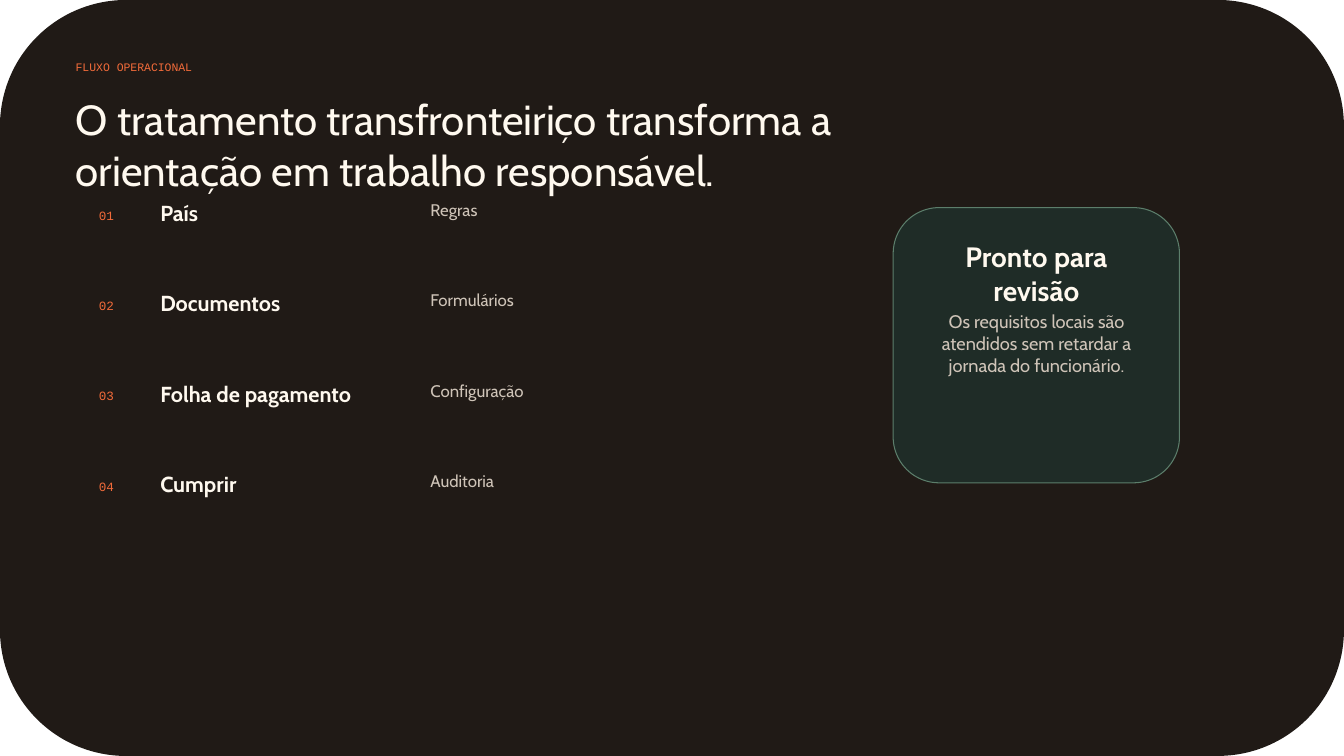
from pptx import Presentation
from pptx.dml.color import RGBColor
from pptx.enum.shapes import MSO_SHAPE
from pptx.enum.text import MSO_ANCHOR, MSO_AUTO_SIZE, PP_ALIGN
from pptx.util import Inches, Pt

DARK = RGBColor(0x20, 0x1A, 0x16)
CREAM = RGBColor(0xFF, 0xF9, 0xEF)
SAND = RGBColor(0xCF, 0xC4, 0xB8)
ORANGE = RGBColor(0xF2, 0x6B, 0x3A)
GREEN = RGBColor(0x1F, 0x2C, 0x27)
SAGE = RGBColor(0x5C, 0x7E, 0x6B)

STEPS = [
    ("País", "Regras"),
    ("Documentos", "Formulários"),
    ("Folha de pagamento", "Configuração"),
    ("Cumprir", "Auditoria"),
]
FIRST, PITCH = 26.4, 11.96


class Page:
    """One slide; every box is (left, top, width, height) in percent of it."""

    sans, mono = "Cabin", "Courier New"

    def __init__(self, deck):
        self.wide, self.high = deck.slide_width, deck.slide_height
        self.slide = deck.slides.add_slide(deck.slide_layouts[5])
        self.shapes = self.slide.shapes

    def place(self, box):
        sides = (self.wide, self.high) * 2
        return [round(side * share / 100) for side, share in zip(sides, box)]

    def letter(self, shape, text, size, color, font=sans, bold=False,
               align=PP_ALIGN.LEFT):
        """Put one styled paragraph into a shape."""
        frame = shape.text_frame
        frame.word_wrap = True
        frame.auto_size = MSO_AUTO_SIZE.NONE
        frame.vertical_anchor = MSO_ANCHOR.TOP
        frame.margin_left = frame.margin_right = 0
        frame.margin_top = frame.margin_bottom = 0
        line = frame.paragraphs[0]
        line.text, line.alignment = text, align
        line.font.name, line.font.size = font, Pt(size)
        line.font.bold, line.font.color.rgb = bold, color

    def title(self, box, text, size, color):
        shape = self.shapes.title
        shape.left, shape.top, shape.width, shape.height = self.place(box)
        self.letter(shape, text, size, color)

    def text(self, box, *args, **style):
        self.letter(self.shapes.add_textbox(*self.place(box)), *args, **style)

    def panel(self, box, fill, edge=None):
        shape = self.shapes.add_shape(
            MSO_SHAPE.ROUNDED_RECTANGLE, *self.place(box))
        shape.shadow.inherit = False
        shape.fill.solid()
        shape.fill.fore_color.rgb = fill
        if edge is None:
            shape.line.fill.background()
        else:
            shape.line.color.rgb = edge
            shape.line.width = Pt(0.75)
        return shape

    def backdrop(self, fill):
        """Fill the slide with a panel that lies behind the title."""
        panel = self.panel((0, 0, 100, 100), fill)
        self.shapes.title.element.addprevious(panel.element)

    def step(self, index, name, detail):
        top = FIRST + index * PITCH
        self.text((7.35, top + 1.05, 4.13, 3.2), f"{index + 1:02}", 9, ORANGE,
                  font=self.mono)
        self.text((11.93, top, 21.3, 3.73), name, 15.5, CREAM, bold=True)
        self.text((32.03, top, 29.56, 4.13), detail, 12, SAND)


def main():
    deck = Presentation()
    deck.slide_width, deck.slide_height = Inches(13.33), Inches(7.5)
    page = Page(deck)
    page.backdrop(DARK)
    page.text((5.63, 8, 34.43, 3.73), "FLUXO OPERACIONAL", 8.2, ORANGE,
              font=page.mono)
    page.title((5.63, 12.4, 70.59, 9.47),
               "O tratamento transfronteiriço transforma a orientação "
               "em trabalho responsável.", 30, CREAM)
    for index, (name, detail) in enumerate(STEPS):
        page.step(index, name, detail)
    page.panel((66.46, 27.47, 21.3, 36.4), GREEN, SAGE)
    page.text((68.49, 31.73, 17.25, 6.13), "Pronto para revisão", 20, CREAM,
              bold=True, align=PP_ALIGN.CENTER)
    page.text((68.49, 41.07, 17.25, 13.07),
              "Os requisitos locais são atendidos sem retardar a jornada "
              "do funcionário.", 13, SAND, align=PP_ALIGN.CENTER)
    deck.save("out.pptx")


if __name__ == "__main__":
    main()
